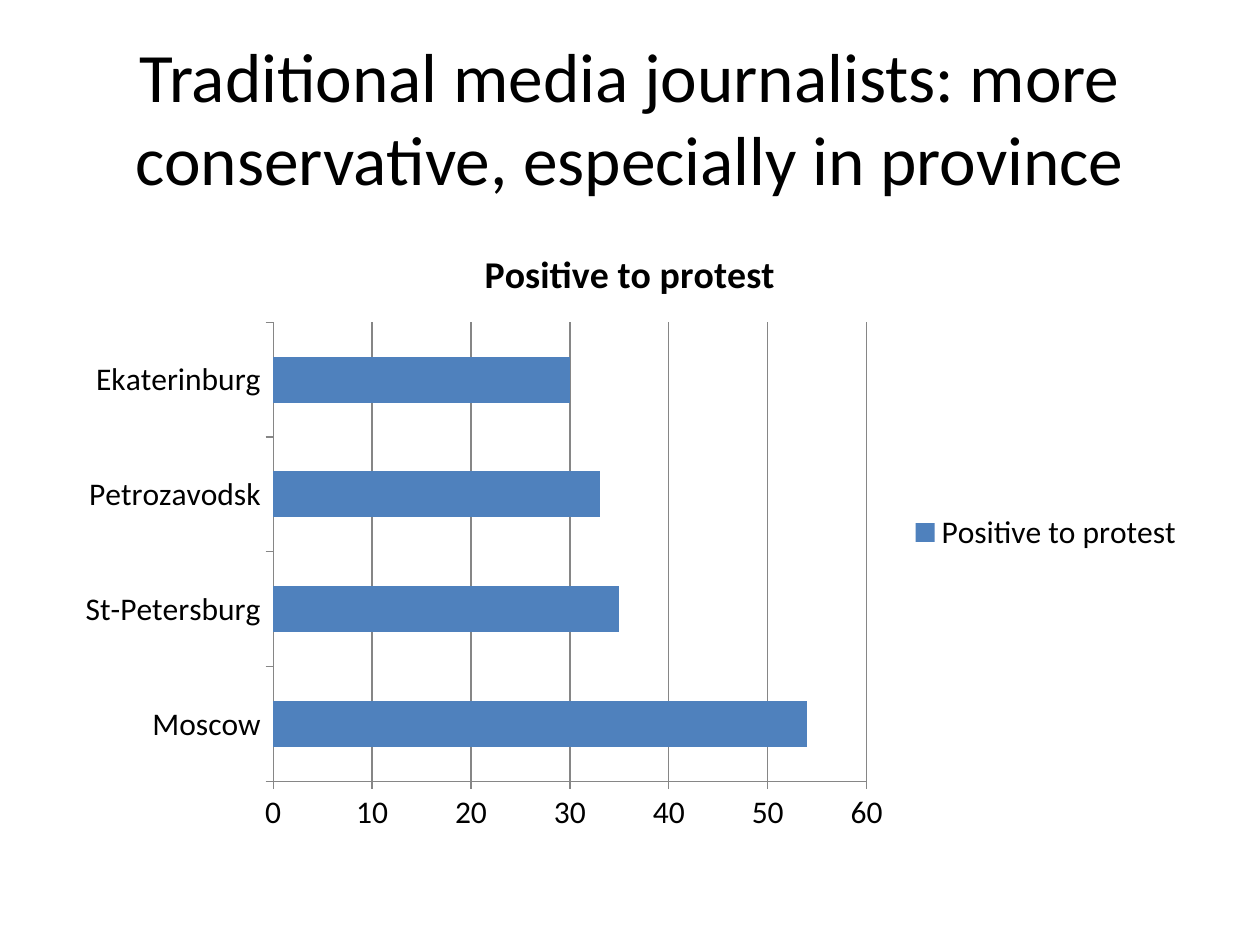
from dataclasses import dataclass

import pptx
import pptx.chart.data
import pptx.dml.color
import pptx.enum.chart
import pptx.enum.text
import pptx.util
from pptx.util import Cm

COLORS = {"text": "000000", "bar": "4F81BD", "line": "868686"}
FONT = "Calibri"
SERIES = "Positive to protest"


@dataclass
class Box:
    left: float
    top: float
    width: float
    height: float

    def lengths(self) -> list[Cm]:
        return [Cm(v) for v in (self.left, self.top, self.width, self.height)]


@dataclass
class City:
    name: str
    positive: int


CITIES = [
    City("Moscow", 54),
    City("St-Petersburg", 35),
    City("Petrozavodsk", 33),
    City("Ekaterinburg", 30),
]


def rgb(name: str) -> pptx.dml.color.RGBColor:
    return pptx.dml.color.RGBColor.from_string(COLORS[name])


def style_font(font, size: float, bold: bool = False) -> None:
    font.name = FONT
    font.size = pptx.util.Pt(size)
    font.bold = bold
    font.color.rgb = rgb("text")


def style_line(line) -> None:
    line.color.rgb = rgb("line")
    line.width = pptx.util.Pt(0.75)


def add_title(s, box: Box, text: str) -> None:
    tf = s.shapes.add_textbox(*box.lengths()).text_frame
    tf.word_wrap = True
    tf.vertical_anchor = pptx.enum.text.MSO_ANCHOR.MIDDLE
    p = tf.paragraphs[0]
    p.alignment = pptx.enum.text.PP_ALIGN.CENTER
    r = p.add_run()
    r.text = text
    style_font(r.font, 39.6)


def add_city_chart(s, box: Box, cities: list[City]) -> None:
    data = pptx.chart.data.CategoryChartData()
    data.categories = [c.name for c in cities]
    data.add_series(SERIES, [c.positive for c in cities])
    chart = s.shapes.add_chart(
        pptx.enum.chart.XL_CHART_TYPE.BAR_CLUSTERED, *box.lengths(), data
    ).chart
    style_font(chart.font, 18)

    chart.has_title = True
    r = chart.chart_title.text_frame.paragraphs[0].add_run()
    r.text = SERIES
    style_font(r.font, 21.6, bold=True)

    chart.has_legend = True
    chart.legend.position = pptx.enum.chart.XL_LEGEND_POSITION.RIGHT
    chart.legend.include_in_layout = False

    for axis in (chart.category_axis, chart.value_axis):
        axis.major_tick_mark = pptx.enum.chart.XL_TICK_MARK.OUTSIDE
        style_line(axis.format.line)
    chart.value_axis.has_major_gridlines = True
    style_line(chart.value_axis.major_gridlines.format.line)

    plot = chart.plots[0]
    plot.gap_width = 150
    plot.vary_by_categories = False
    fill = plot.series[0].format.fill
    fill.solid()
    fill.fore_color.rgb = rgb("bar")


def main() -> None:
    prs = pptx.Presentation()
    prs.slide_width, prs.slide_height = Cm(25.4), Cm(19.05)
    s = prs.slides.add_slide(prs.slide_layouts[6])
    add_title(
        s,
        Box(1.27, 0.76, 22.86, 3.18),
        "Traditional media journalists: more conservative, especially in province",
    )
    add_city_chart(s, Box(1.27, 4.45, 22.86, 12.57), CITIES)
    prs.save("out.pptx")


if __name__ == "__main__":
    main()
